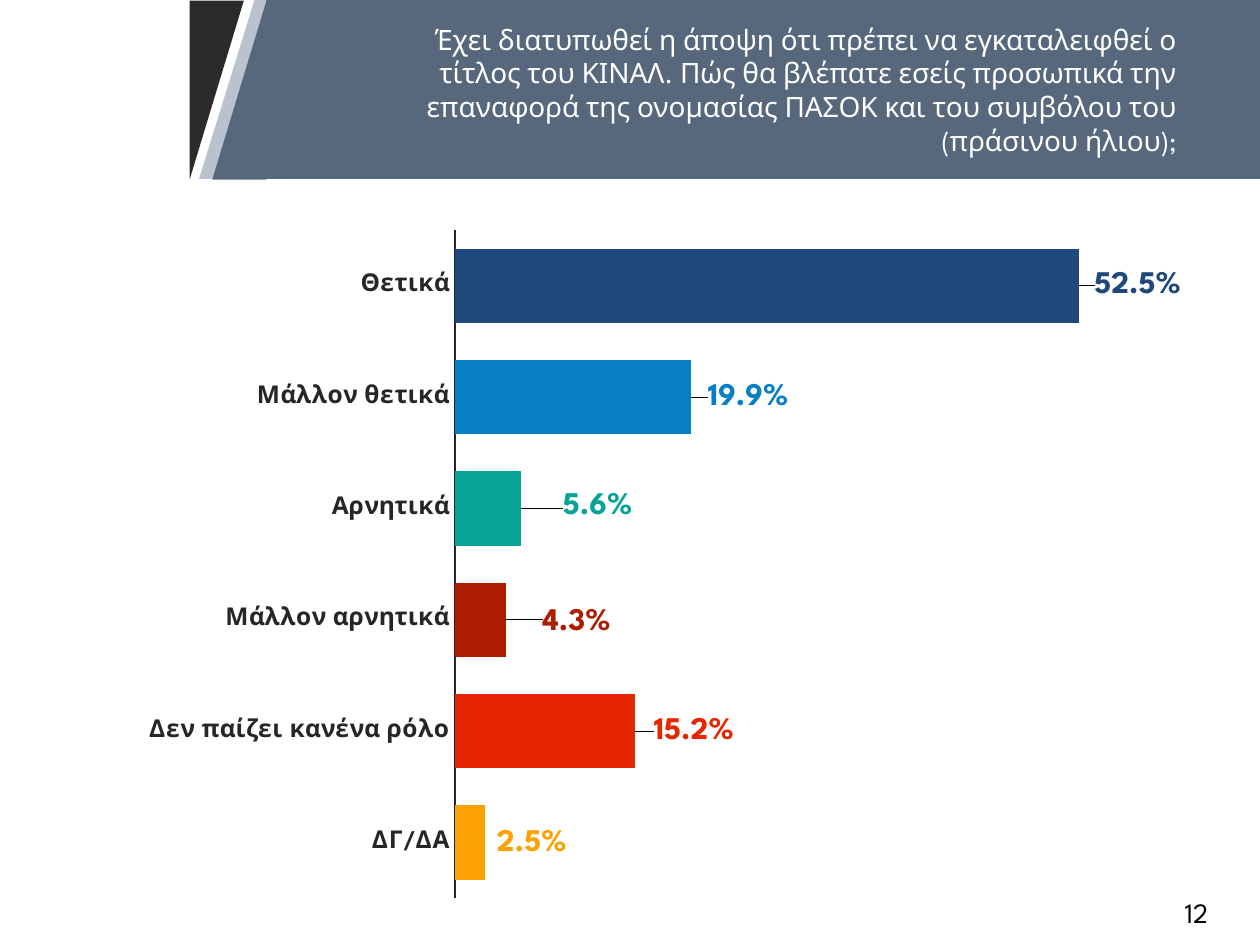
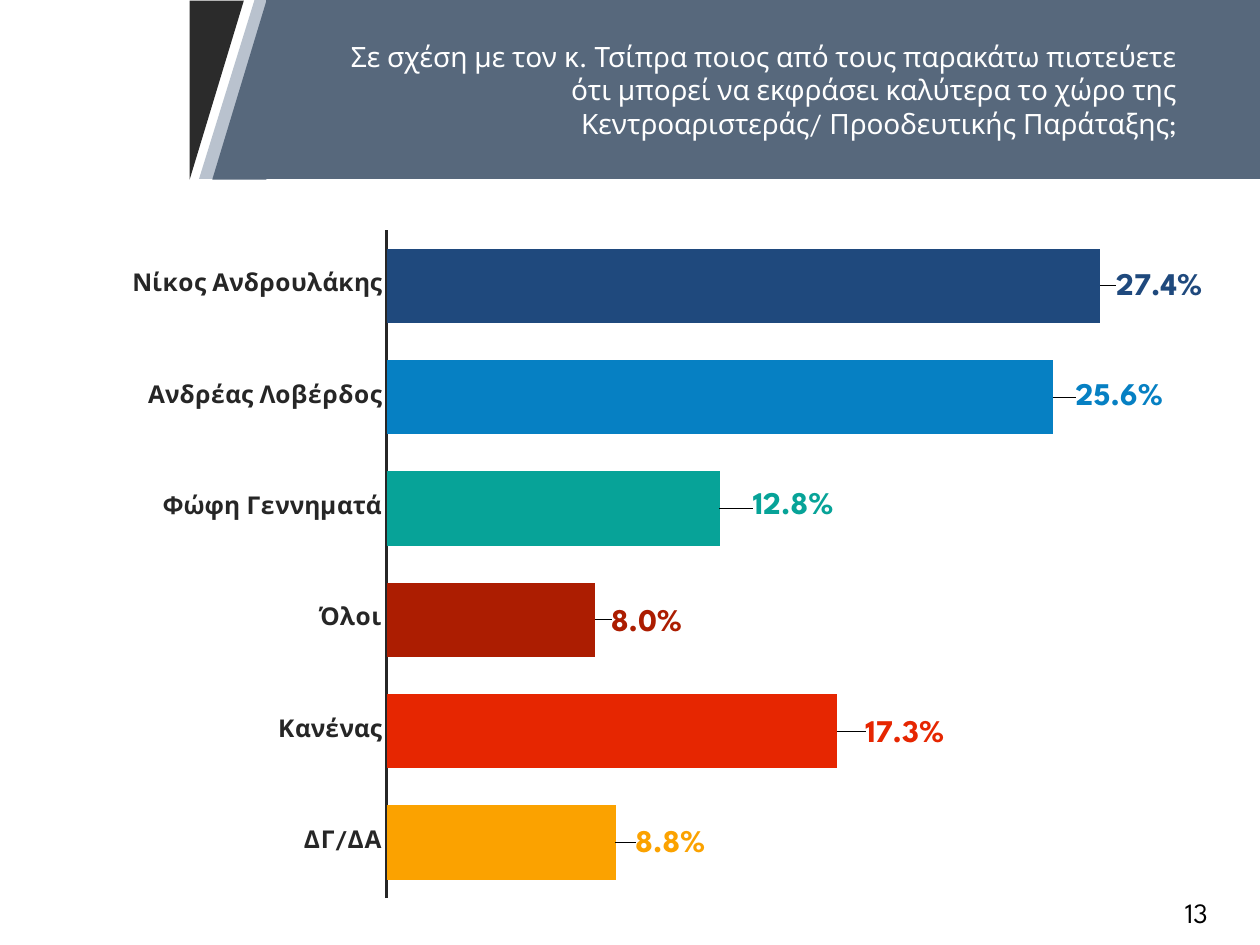
from lxml import etree
from pptx import Presentation
from pptx import util as u
from pptx.chart.data import CategoryChartData
from pptx.dml.color import RGBColor
from pptx.enum import chart as charts, shapes, text
from pptx.oxml.ns import qn

WIDTH, HEIGHT = 10, 7.5
BANNER_HEIGHT = 1.42
PLOT_TOP, PLOT_HEIGHT, PLOT_RIGHT = 0.067, 0.872, 0.927
FONT = "League Spartan"
INK, BLACK, WHITE = "262626", "000000", "FFFFFF"
SLATE, MIST, CHARCOAL = "57687C", "B9C2CE", "2B2B2B"
BAR_COLORS = ["1F497D", "0680C3", "07A398", "AC1D01", "E62601", "FBA200"]
rgb = RGBColor.from_string

# preset, left, top, width, height, rotation, adjustment, fill
SLANT, WEDGE = shapes.MSO_SHAPE.PARALLELOGRAM, shapes.MSO_SHAPE.RIGHT_TRIANGLE
BANNER = [
    (SLANT, 1.58, 0, 8.44, BANNER_HEIGHT, 0, 0.31, MIST),
    (WEDGE, 1.01, 0.5, BANNER_HEIGHT, 0.43, 90, None, CHARCOAL),
    (SLANT, 2.11, 0, 7.89, BANNER_HEIGHT, 0, 0, SLATE),
    (WEDGE, 1.19, 0.5, BANNER_HEIGHT, 0.43, 270, None, SLATE),
]

# Each answer: name, share, label shift right and down as shares of the chart
QUESTIONS = [
    dict(
        number=12, axis_left=0.361, maximum=0.6,
        title="Έχει διατυπωθεί η άποψη ότι πρέπει να εγκαταλειφθεί ο τίτλος του ΚΙΝΑΛ. "
              "Πώς θα βλέπατε εσείς προσωπικά την επαναφορά της ονομασίας ΠΑΣΟΚ "
              "και του συμβόλου του (πράσινου ήλιου);",
        answers=[
            ("Θετικά", 0.525, 0.085, 0),
            ("Μάλλον θετικά", 0.199, 0.081, 0),
            ("Αρνητικά", 0.056, 0.092, -0.002),
            ("Μάλλον αρνητικά", 0.043, 0.087, 0.003),
            ("Δεν παίζει κανένα ρόλο", 0.152, 0.082, 0),
            ("ΔΓ/ΔΑ", 0.025, 0.069, 0.001),
        ],
    ),
    dict(
        number=13, axis_left=0.307, maximum=0.3,
        title="Σε σχέση με τον κ. Τσίπρα ποιος από τους παρακάτω πιστεύετε ότι μπορεί "
              "να εκφράσει καλύτερα το χώρο της Κεντροαριστεράς/ Προοδευτικής Παράταξης;",
        answers=[
            ("Νίκος Ανδρουλάκης", 0.274, 0.085, 0.002),
            ("Ανδρέας Λοβέρδος", 0.256, 0.091, 0),
            ("Φώφη Γεννηματά", 0.128, 0.094, -0.002),
            ("Όλοι", 0.08, 0.073, 0.005),
            ("Κανένας", 0.173, 0.089, 0.004),
            ("ΔΓ/ΔΑ", 0.088, 0.075, 0.003),
        ],
    ),
]


def style(font, color, **values):
    font.color.rgb = rgb(color)
    for name, value in dict(name=FONT, **values).items():
        setattr(font, name, value)


def place(parent, index, **values):
    """Insert a manual chart layout as the child of parent at index."""
    for old in parent.findall(qn("c:layout")):
        parent.remove(old)
    layout = etree.Element(qn("c:layout"))
    manual = etree.SubElement(layout, qn("c:manualLayout"))
    for name, value in values.items():
        etree.SubElement(manual, qn(f"c:{name}")).set("val", str(value))
    parent.insert(index, layout)


presentation = Presentation()
presentation.slide_width, presentation.slide_height = u.Inches(WIDTH), u.Inches(HEIGHT)

for question in QUESTIONS:
    slide = presentation.slides.add_slide(presentation.slide_layouts[6])
    names, shares, shifts_right, shifts_down = zip(*question["answers"])

    # Bar chart of the answers
    data = CategoryChartData(number_format="0.0%")
    data.categories = names
    data.add_series("Series 1", shares)
    frame = slide.shapes.add_chart(
        charts.XL_CHART_TYPE.BAR_STACKED, 0, u.Inches(BANNER_HEIGHT),
        u.Inches(WIDTH), u.Inches(HEIGHT - BANNER_HEIGHT), data)
    chart = frame.chart
    chart.has_title = chart.has_legend = False
    style(chart.font, BLACK, size=u.Pt(10))
    left = question["axis_left"]
    place(chart.plots[0]._element.getparent(), 0, layoutTarget="inner",
          xMode="edge", yMode="edge", x=left, y=PLOT_TOP,
          w=round(PLOT_RIGHT - left, 3), h=PLOT_HEIGHT)

    no_ticks = charts.XL_TICK_MARK.NONE
    axis_formats = [
        (chart.category_axis, dict(reverse_order=True, major_tick_mark=no_ticks,
                                   minor_tick_mark=no_ticks, has_major_gridlines=False)),
        (chart.value_axis, dict(visible=False, has_major_gridlines=False,
                                minimum_scale=0, maximum_scale=question["maximum"])),
        (chart.plots[0], dict(gap_width=50, overlap=100, vary_by_categories=False)),
    ]
    for target, values in axis_formats:
        for name, value in values.items():
            setattr(target, name, value)
    style(chart.category_axis.tick_labels.font, INK, size=u.Pt(14), bold=True)
    chart.category_axis.format.line.color.rgb = rgb(INK)
    chart.category_axis.format.line.width = u.Pt(1.5)

    series = chart.plots[0].series[0]
    labels = series.data_labels
    labels.show_value = True
    labels.number_format, labels.number_format_is_linked = "0.0%", False
    labels.position = charts.XL_LABEL_POSITION.INSIDE_END
    for i, color in enumerate(BAR_COLORS):
        point = series.points[i]
        point.format.fill.solid()
        point.format.fill.fore_color.rgb = rgb(color)
        style(point.data_label.font, color, size=u.Pt(18), bold=True)
        point.data_label.position = charts.XL_LABEL_POSITION.INSIDE_END
        place(labels._element.findall(qn("c:dLbl"))[i], 1,
              x=shifts_right[i], y=shifts_down[i])

    # Page number
    page = slide.shapes.add_textbox(*map(u.Inches, (8.99, 6.98, 1.01, 0.52)))
    page_text = [(page, str(question["number"]), BLACK, text.PP_ALIGN.CENTER)]

    # Banner with the question
    for preset, x, y, width, height, rotation, adjustment, color in BANNER:
        shape = slide.shapes.add_shape(preset, *map(u.Inches, (x, y, width, height)))
        shape.shadow.inherit = False
        shape.rotation = rotation
        shape.fill.solid()
        shape.fill.fore_color.rgb = rgb(color)
        shape.line.fill.background()
        if adjustment is not None:
            shape.adjustments[0] = adjustment
        if (preset, color) == (SLANT, SLATE):
            title = shape
    title.text_frame.margin_left = title.text_frame.margin_right = 0

    for shape, words, color, alignment in page_text + [
            (title, question["title"], WHITE, text.PP_ALIGN.RIGHT)]:
        shape.text_frame.word_wrap = True
        shape.text_frame.vertical_anchor = text.MSO_ANCHOR.MIDDLE
        paragraph = shape.text_frame.paragraphs[0]
        paragraph.alignment = alignment
        run = paragraph.add_run()
        run.text = words
        style(run.font, color, size=u.Pt(16))

presentation.save("out.pptx")
